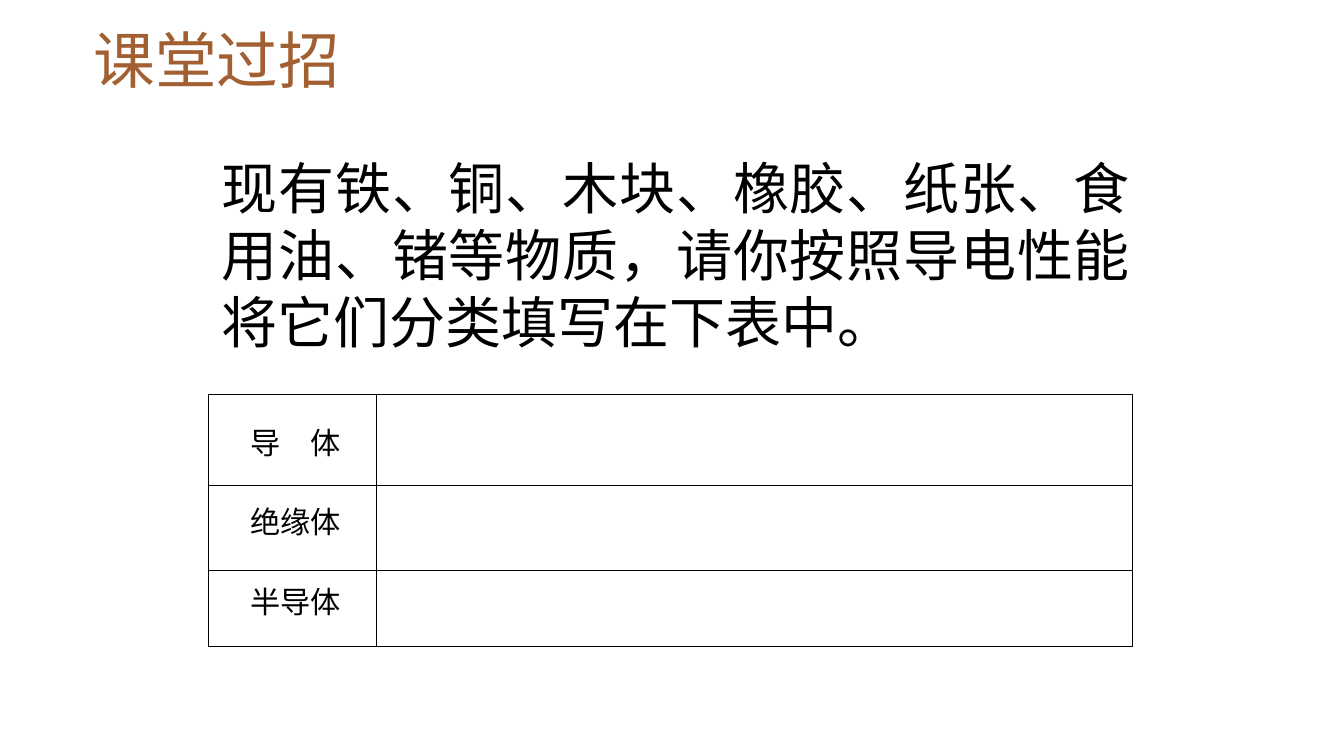
from lxml.etree import SubElement
from pptx import Presentation
from pptx.dml.color import RGBColor as Rgb
from pptx.enum.shapes import MSO_CONNECTOR as Link, MSO_SHAPE as Kind
from pptx.enum.text import PP_ALIGN as Align
from pptx.oxml.ns import qn
from pptx.util import Pt

PX = 9144  # EMU per px, 100 px to the inch
FONT = "Noto Sans CJK SC"
BLACK = "000000"


def px(n):
    return n * PX


def color(code):
    return Rgb.from_string(code)


def write(frame, text, size=40, lead=48, ink=BLACK, align=Align.LEFT):
    """Fill a text frame with one paragraph; lead is the line pitch in points."""
    par = frame.paragraphs[0]
    par.alignment = align
    par.line_spacing = Pt(lead)
    run = par.add_run()
    run.text = text
    font = run.font
    font.name, font.size = FONT, Pt(size)
    font.color.rgb = color(ink)
    SubElement(font._element, qn("a:ea"), typeface=FONT)


class Page:
    def __init__(self, wide, high):
        self.deck = Presentation()
        self.deck.slide_width, self.deck.slide_height = px(wide), px(high)
        self.slide = self.deck.slides.add_slide(self.deck.slide_layouts[6])
        self.shapes = self.slide.shapes

    def stroke(self, line):
        line.color.rgb = color(BLACK)
        line.width = Pt(0.75)

    def text(self, box, text, wrap=True, **style):
        frame = self.shapes.add_textbox(*map(px, box)).text_frame
        frame.word_wrap = wrap
        frame.margin_left = frame.margin_right = px(10)
        frame.margin_top = frame.margin_bottom = px(5)
        write(frame, text, **style)

    def frame(self, *box):
        rect = self.shapes.add_shape(Kind.RECTANGLE, *map(px, box))
        rect.shadow.inherit = False
        rect.fill.background()
        self.stroke(rect.line)

    def rule(self, *ends):
        line = self.shapes.add_connector(Link.STRAIGHT, *map(px, ends))
        SubElement(line._element.spPr, qn("a:effectLst"))
        self.stroke(line.line)


def main():
    page = Page(1333, 750)
    page.text(
        (210, 147, 921, 212),
        "现有铁、铜、木块、橡胶、纸张、食用油、锗等物质，"
        "请你按照导电性能将它们分类填写在下表中。",
        align=Align.JUSTIFY,
    )
    left, top, wide, high = 207, 391, 916, 250
    page.frame(left, top, wide, high)
    for y in (482, 566):
        page.rule(left, y, left + wide, y)
    page.rule(373, top, 373, top + high)
    for i, label in enumerate(("导　体", "绝缘体", "半导体")):
        page.text((218, 414 + 79 * i, 150, 50), label, wrap=False,
                  size=21.6, lead=27, align=Align.CENTER)
    page.text((83, 18, 416, 84), "课堂过招", size=44, lead=52, ink="A15F32")
    page.deck.save("out.pptx")


if __name__ == "__main__":
    main()
